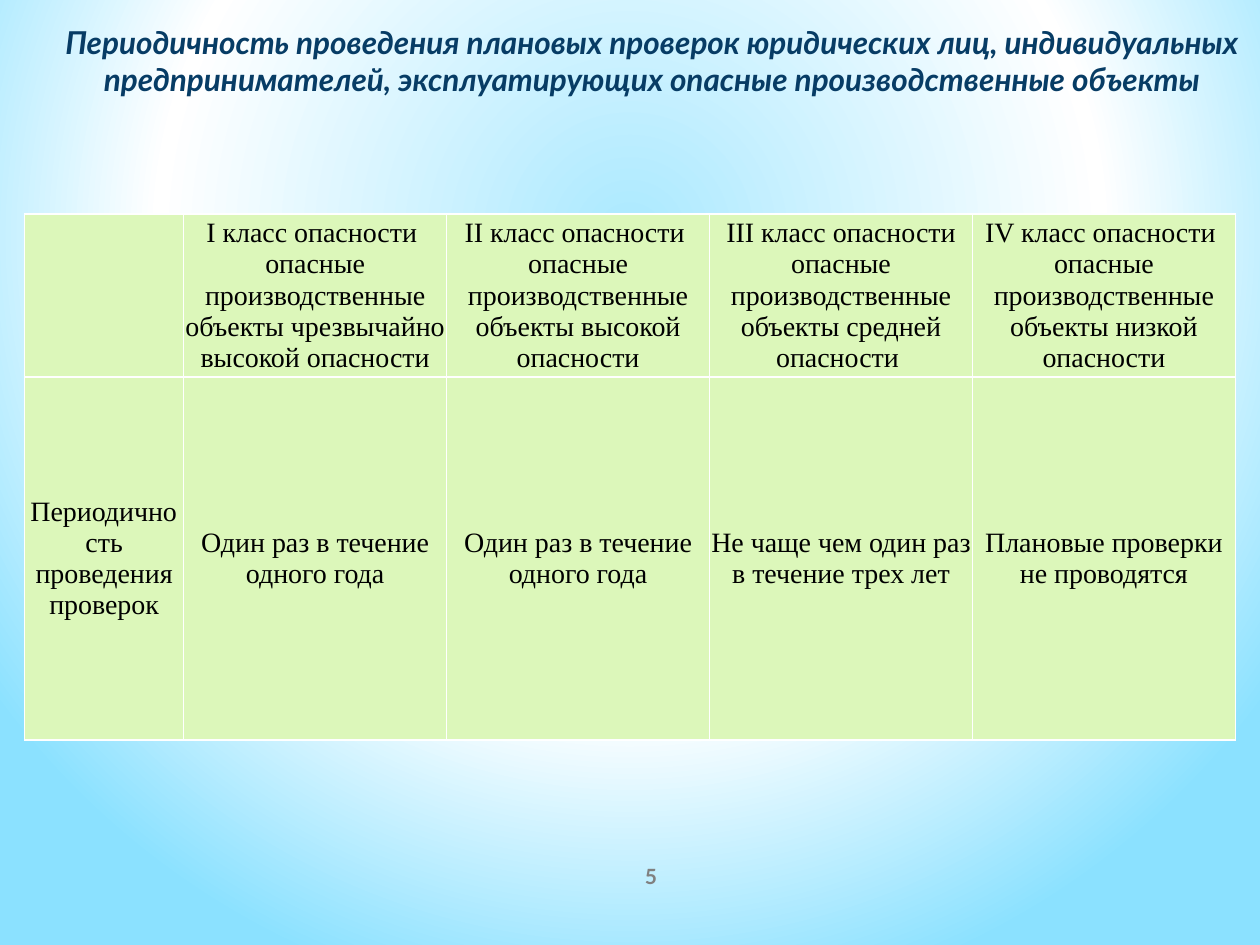
from lxml.etree import fromstring
from pptx import Presentation
from pptx.dml.color import RGBColor as Rgb
from pptx.enum.text import MSO_ANCHOR as Anchor, MSO_AUTO_SIZE as AutoSize, PP_ALIGN as Align
from pptx.oxml.ns import nsdecls, qn
from pptx.util import Pt

COLORS = {
    "center": "ABE9FF",
    "glow": "FFFFFF",
    "edge": "8BE1FF",
    "cell": "DCF7BA",
    "border": "FFFFFF",
    "body": "000000",
    "title": "073C65",
    "number": "808080",
}
TITLE = {"name": "Lato", "size": Pt(18), "bold": True, "italic": True}
NUMBER = {"name": "Lato", "size": Pt(12), "bold": True}
BODY = {"name": "Times New Roman", "size": Pt(16), "bold": False}
NO_MARGINS = dict.fromkeys(("margin_left", "margin_top", "margin_right", "margin_bottom"), 0)

HEADING = (
    "Периодичность проведения плановых проверок юридических лиц, индивидуальных "
    "предпринимателей, эксплуатирующих опасные производственные объекты"
)
HAZARD_CLASSES = [
    "",
    "I класс опасности \nопасные производственные объекты чрезвычайно высокой опасности",
    "II класс опасности \nопасные производственные объекты высокой опасности",
    "III класс опасности\nопасные производственные объекты средней опасности ",
    "IV класс опасности \nопасные производственные объекты низкой опасности",
]
FREQUENCIES = [
    "Периодичность проведения проверок",
    "Один раз в течение одного года",
    "Один раз в течение одного года",
    "Не чаще чем один раз в течение трех лет",
    "Плановые проверки не проводятся",
]


def apply(target, values):
    for key, value in values.items():
        setattr(target, key, value)


class SlideBuilder:
    def __init__(self, slide, colors):
        self.slide = slide
        self.colors = colors

    def background(self, stops, focus):
        self.slide.background.fill.solid()
        properties = self.slide.element.find(".//" + qn("p:bgPr"))
        marks = "".join(
            f'<a:gs pos="{percent * 1000}"><a:srgbClr val="{self.colors[color]}"/></a:gs>'
            for percent, color in stops
        )
        sides = " ".join(f'{side}="{percent * 1000}"' for side, percent in zip("ltrb", focus))
        properties.replace(properties[0], fromstring(
            f'<a:gradFill {nsdecls("a")} rotWithShape="1"><a:gsLst>{marks}</a:gsLst>'
            f'<a:path path="circle"><a:fillToRect {sides}/></a:path></a:gradFill>'
        ))

    def fill_text(self, frame, text, style, color):
        frame.text = text
        for paragraph in frame.paragraphs:
            paragraph.alignment = Align.CENTER
            for run in paragraph.runs:
                apply(run.font, style)
                run.font.color.rgb = Rgb.from_string(self.colors[color])

    def text(self, box, text, style, color, **layout):
        frame = self.slide.shapes.add_textbox(*map(Pt, box)).text_frame
        apply(frame, {"word_wrap": True, **layout})
        self.fill_text(frame, text, style, color)

    def borders(self, cell):
        properties = cell._tc.get_or_add_tcPr()
        for index, side in enumerate("LRTB"):
            properties.insert(index, fromstring(
                f'<a:ln{side} {nsdecls("a")} w="{Pt(1)}"><a:solidFill>'
                f'<a:srgbClr val="{self.colors["border"]}"/></a:solidFill></a:ln{side}>'
            ))

    def table(self, left, top, widths, heights, rows, style):
        size = map(Pt, (left, top, sum(widths), sum(heights)))
        table = self.slide.shapes.add_table(len(heights), len(widths), *size).table
        for column, width in zip(table.columns, widths):
            column.width = Pt(width)
        for row, height, texts in zip(table.rows, heights, rows):
            row.height = Pt(height)
            for cell, text in zip(row.cells, texts):
                apply(cell, {"vertical_anchor": Anchor.MIDDLE, **NO_MARGINS})
                cell.fill.solid()
                cell.fill.fore_color.rgb = Rgb.from_string(self.colors["cell"])
                self.borders(cell)
                self.fill_text(cell.text_frame, text, style, "body")


def main():
    deck = Presentation()
    apply(deck, {"slide_width": Pt(720), "slide_height": Pt(540)})
    builder = SlideBuilder(deck.slides.add_slide(deck.slide_layouts[6]), COLORS)
    builder.background([(0, "center"), (60, "glow"), (100, "edge")], (20, 10, 20, 60))
    builder.table(14, 122.4, [91] + [150.25] * 4, [93, 207.5], [HAZARD_CLASSES, FREQUENCIES], BODY)
    builder.text((25.2, 9.4, 694.8, 72.7), HEADING, TITLE, "title",
                 auto_size=AutoSize.SHAPE_TO_FIT_TEXT)
    builder.text((300, 486, 144, 28.8), "5", NUMBER, "number", vertical_anchor=Anchor.MIDDLE)
    deck.save("out.pptx")


if __name__ == "__main__":
    main()
